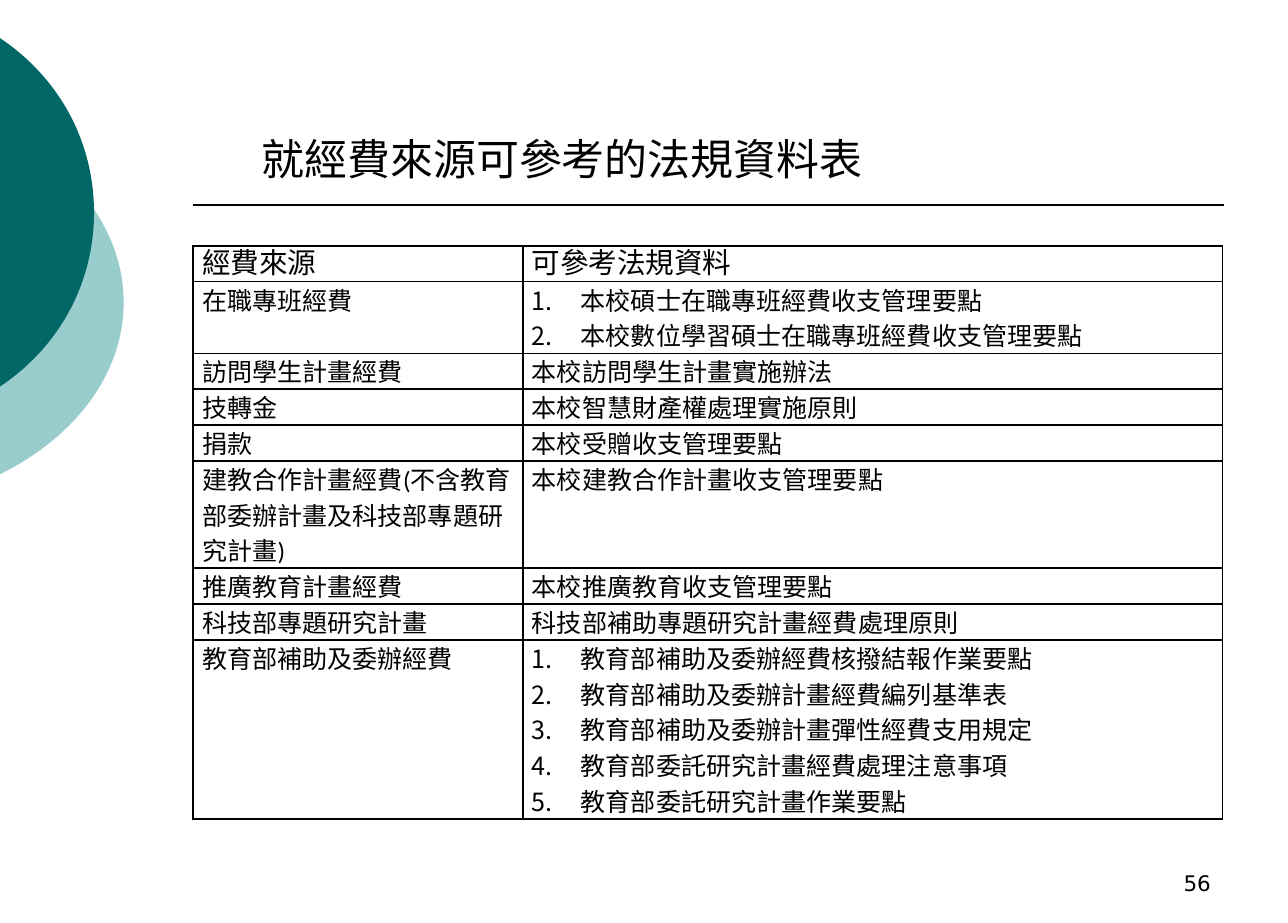
from dataclasses import dataclass

from lxml import etree
from pptx import Presentation, util as u
from pptx.dml.color import RGBColor
from pptx.enum import shapes, text
from pptx.oxml import parse_xml
from pptx.oxml.ns import nsdecls, qn

TITLE = "就經費來源可參考的法規資料表"
PAGE_NUMBER = "56"
# Source, its rules (a list is numbered), and the lines of text the row holds
ROWS = [
    ("經費來源", "可參考法規資料", 1),
    ("在職專班經費", ["本校碩士在職專班經費收支管理要點",
                "本校數位學習碩士在職專班經費收支管理要點"], 2),
    ("訪問學生計畫經費", "本校訪問學生計畫實施辦法", 1),
    ("技轉金", "本校智慧財產權處理實施原則", 1),
    ("捐款", "本校受贈收支管理要點", 1),
    ("建教合作計畫經費(不含教育部委辦計畫及科技部專題研究計畫)",
     "本校建教合作計畫收支管理要點", 3),
    ("推廣教育計畫經費", "本校推廣教育收支管理要點", 1),
    ("科技部專題研究計畫", "科技部補助專題研究計畫經費處理原則", 1),
    ("教育部補助及委辦經費", ["教育部補助及委辦經費核撥結報作業要點",
                    "教育部補助及委辦計畫經費編列基準表",
                    "教育部補助及委辦計畫彈性經費支用規定",
                    "教育部委託研究計畫經費處理注意事項",
                    "教育部委託研究計畫作業要點"], 5),
]


@dataclass(frozen=True)
class Theme:
    ink: RGBColor = RGBColor(0, 0, 0)
    dark: RGBColor = RGBColor(0x00, 0x66, 0x66)
    light: RGBColor = RGBColor(0x99, 0xCC, 0xCC)
    title_size: int = 24
    header_size: int = 16
    body_size: int = 14
    number_size: int = 12
    leading: int = 20


THEME = Theme()
WIDTH, HEIGHT = 10, 7.17
LEFT, RIGHT = 0.15 * WIDTH, 0.95 * WIDTH
RULE_TOP, TABLE_TOP = 1.59, 1.91
COLUMNS = (2.56, 5.43)
LIST_INDENT = u.Inches(0.38)
# Frame of each disc, and the curve of its upper half from the slide's left
# edge to its rightmost point; back to front
DISCS = [
    ((-3.54, 0.72, 4.5, 3.26), THEME.light,
     [(-0.01, 1.01), (0.6, 1.31), (0.96, 1.81), (0.96, 2.35)]),
    ((-2.65, 0, 3.38, 3.3), THEME.dark,
     [(-0.01, 0.29), (0.46, 0.6), (0.73, 1.1), (0.73, 1.65)]),
]


def style(para, size, font):
    para.font.size, para.font.name = u.Pt(size), font
    para.font.color.rgb = THEME.ink


def add_disc(page, frame, color, upper):
    """Draw a disc cut at the slide's edge; its lower half mirrors the upper."""
    left, top, width, height = map(u.Inches, frame)
    middle = upper[-1][1]
    lower = [(x, 2 * middle - y) for x, y in reversed(upper[:-1])]
    points = "".join(
        f'<a:pt x="{u.Inches(x) - left}" y="{u.Inches(y) - top}"/>|'
        for x, y in upper + lower).split("|")
    outline = parse_xml(
        f'<a:custGeom {nsdecls("a")}><a:avLst/><a:pathLst>'
        f'<a:path w="{width}" h="{height}"><a:moveTo>{points[0]}</a:moveTo>'
        f'<a:cubicBezTo>{"".join(points[1:4])}</a:cubicBezTo>'
        f'<a:cubicBezTo>{"".join(points[4:7])}</a:cubicBezTo>'
        '<a:close/></a:path></a:pathLst></a:custGeom>')
    disc = page.shapes.add_shape(shapes.MSO_SHAPE.OVAL, left, top, width, height)
    props = disc._element.spPr
    props.replace(props.find(qn("a:prstGeom")), outline)
    disc.shadow.inherit = False
    disc.fill.solid()
    disc.fill.fore_color.rgb = color
    disc.line.fill.background()


def add_rule(page):
    rule = page.shapes.add_connector(
        shapes.MSO_CONNECTOR.STRAIGHT, u.Inches(LEFT), u.Inches(RULE_TOP),
        u.Inches(RIGHT), u.Inches(RULE_TOP))
    rule.line.color.rgb, rule.line.width = THEME.ink, u.Pt(1)
    etree.SubElement(rule._element.spPr, qn("a:effectLst"))


def add_title(page):
    title = page.shapes.title
    title.left, title.top = u.Inches(1.93), u.Inches(0.98)
    title.width, title.height = u.Inches(5.69), u.Inches(0.5)
    frame = title.text_frame
    frame.text = TITLE
    frame.auto_size = text.MSO_AUTO_SIZE.SHAPE_TO_FIT_TEXT
    frame.vertical_anchor = text.MSO_ANCHOR.TOP
    frame.paragraphs[0].alignment = text.PP_ALIGN.LEFT
    style(frame.paragraphs[0], THEME.title_size, "Arial")


def add_page_number(page):
    box = page.shapes.add_textbox(u.Inches(RIGHT - 2.33), u.Inches(6.53),
                                  u.Inches(2.33), u.Inches(0.48))
    frame = box.text_frame
    frame.word_wrap = True
    frame.vertical_anchor = text.MSO_ANCHOR.BOTTOM
    frame.text = PAGE_NUMBER
    frame.paragraphs[0].alignment = text.PP_ALIGN.RIGHT
    style(frame.paragraphs[0], THEME.number_size, "DejaVu Sans")


def add_borders(cell):
    props = cell._tc.get_or_add_tcPr()
    for i, side in enumerate(("lnL", "lnR", "lnT", "lnB")):
        props.insert(i, parse_xml(
            f'<a:{side} {nsdecls("a")} w="{u.Pt(1)}"><a:solidFill>'
            f'<a:srgbClr val="{THEME.ink}"/></a:solidFill></a:{side}>'))


def number_paragraph(para):
    props = para._p.get_or_add_pPr()
    props.set("marL", str(LIST_INDENT))
    props.set("indent", str(-LIST_INDENT))
    etree.SubElement(props, qn("a:buFont"), typeface="+mj-lt")
    etree.SubElement(props, qn("a:buAutoNum"), type="arabicPeriod")


def fill_cell(cell, content, size):
    numbered = isinstance(content, list)
    cell.fill.background()
    add_borders(cell)
    cell.margin_left = cell.margin_right = u.Inches(0.07)
    cell.margin_top = cell.margin_bottom = 0
    cell.text_frame.text = "\n".join(content) if numbered else content
    for para in cell.text_frame.paragraphs:
        para.line_spacing = u.Pt(THEME.leading)
        if numbered:
            number_paragraph(para)
        style(para, size, "Calibri")


def add_rules_table(page):
    line_height = u.Pt(THEME.leading)
    height = line_height * sum(lines for *_, lines in ROWS)
    table = page.shapes.add_table(
        len(ROWS), len(COLUMNS), u.Inches(LEFT), u.Inches(TABLE_TOP),
        u.Inches(sum(COLUMNS)), height).table
    table.first_row = table.horz_banding = False
    for column, width in zip(table.columns, COLUMNS):
        column.width = u.Inches(width)
    for r, (*contents, lines) in enumerate(ROWS):
        table.rows[r].height = line_height * lines
        for c, content in enumerate(contents):
            fill_cell(table.cell(r, c), content,
                      THEME.body_size if r else THEME.header_size)


def main():
    deck = Presentation()
    deck.slide_width, deck.slide_height = u.Inches(WIDTH), u.Inches(HEIGHT)
    page = deck.slides.add_slide(deck.slide_layouts.get_by_name("Title Only"))
    for disc in DISCS:
        add_disc(page, *disc)
    add_rule(page)
    add_title(page)
    add_rules_table(page)
    add_page_number(page)
    deck.save("out.pptx")


if __name__ == "__main__":
    main()
